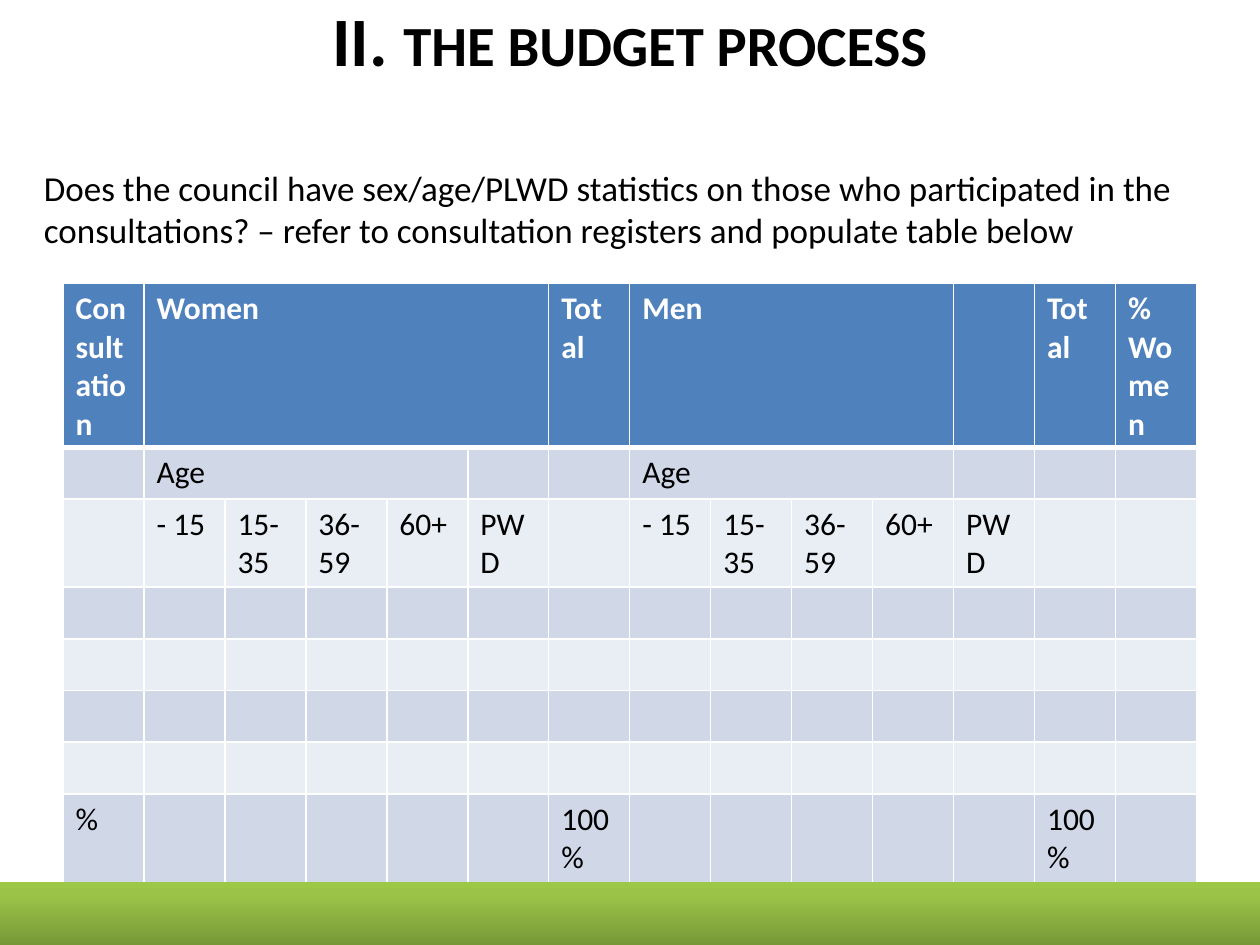
from copy import deepcopy
from dataclasses import dataclass

from lxml.etree import SubElement
from pptx import Presentation
from pptx.dml.color import RGBColor as Color
from pptx.enum.shapes import MSO_SHAPE as Shape
from pptx.enum.text import MSO_ANCHOR as Anchor, PP_ALIGN as Align
from pptx.oxml.ns import qn
from pptx.util import Inches, Pt


@dataclass(frozen=True)
class Theme:
    font: str = "Calibri"
    ink: str = "000000"
    white: str = "FFFFFF"
    head: str = "4F81BD"
    bands: tuple = ("D0D8E8", "E9EDF4")
    bar: tuple = ((0, "779737"), (0.8, "9BC348"), (1, "9DC746"))
    big: float = 39.6
    title: float = 32.4
    body: float = 20
    cell: float = 18
    thin: float = 1
    thick: float = 3


THEME = Theme()
COLS = 14
ROWS = [0.41] * 7 + [1.01]
AGES = ["- 15", "15-35", "36-59", "60+", "PWD"]
TEXTS = {
    0: {0: "Consultation", 1: "Women", 6: "Total", 7: "Men", 12: "Total", 13: "% Women"},
    1: {1: "Age", 7: "Age"},
    2: {start + i: age for start in (1, 7) for i, age in enumerate(AGES)},
    7: {0: "%", 6: "100%", 12: "100%"},
}
SPANS = [(0, 1, 5), (0, 7, 10), (1, 1, 4), (1, 7, 10)]


def style(run, size, color=THEME.ink, bold=False):
    font = run.font
    font.name = THEME.font
    font.size = Pt(size)
    font.bold = bold
    font.color.rgb = Color.from_string(color)


def add_text(slide, box, parts, bold=False):
    frame = slide.shapes.add_textbox(*map(Inches, box)).text_frame
    frame.word_wrap = True
    para = frame.paragraphs[0]
    for text, size in parts:
        run = para.add_run()
        run.text = text
        style(run, size, bold=bold)
    return frame


def add_title(slide):
    parts = [("II. ", THEME.big), ("THE BUDGET PROCESS", THEME.title)]
    frame = add_text(slide, (0.5, 0, 9, 0.62), parts, bold=True)
    frame.margin_top = frame.margin_bottom = 0
    frame.vertical_anchor = Anchor.MIDDLE
    frame.paragraphs[0].alignment = Align.CENTER


def set_edges(cell, base):
    props = cell._tc.get_or_add_tcPr()
    widths = {"lnL": THEME.thin, "lnR": THEME.thin, "lnT": THEME.thin, "lnB": base}
    for i, (tag, width) in enumerate(widths.items()):
        line = SubElement(props, qn(f"a:{tag}"), w=str(Pt(width)))
        fill = SubElement(line, qn("a:solidFill"))
        SubElement(fill, qn("a:srgbClr"), val=THEME.white)
        props.insert(i, line)


def fill_cell(cell, row, text):
    top = row == 0
    cell.fill.solid()
    shade = THEME.head if top else THEME.bands[(row - 1) % 2]
    cell.fill.fore_color.rgb = Color.from_string(shade)
    set_edges(cell, THEME.thick if top else THEME.thin)
    if text:
        para = cell.text_frame.paragraphs[0]
        para.text = text
        style(para.runs[0], THEME.cell, THEME.white if top else THEME.ink, top)


def add_grid(slide):
    box = map(Inches, (0.5, 2.25, 9, sum(ROWS)))
    table = slide.shapes.add_table(len(ROWS), COLS, *box).table
    for col in table.columns:
        col.width = Inches(9 / COLS)
    for r, height in enumerate(ROWS):
        table.rows[r].height = Inches(height)
        for c in range(COLS):
            fill_cell(table.cell(r, c), r, TEXTS.get(r, {}).get(c))
    for row, first, last in SPANS:
        table.cell(row, first).merge(table.cell(row, last))


def add_bar(slide):
    bar = slide.shapes.add_shape(Shape.RECTANGLE, *map(Inches, (0, 7, 10.21, 0.51)))
    bar.shadow.inherit = False
    bar.line.fill.background()
    bar.fill.gradient()
    bar.fill.gradient_angle = 90
    stops = bar._element.spPr.find(f".//{qn('a:gsLst')}")
    stops.append(deepcopy(stops[-1]))
    for stop, (place, color) in zip(bar.fill.gradient_stops, THEME.bar):
        stop.position = place
        stop.color.rgb = Color.from_string(color)


def main():
    deck = Presentation()
    deck.slide_width, deck.slide_height = Inches(10), Inches(7.5)
    slide = deck.slides.add_slide(deck.slide_layouts[6])
    add_title(slide)
    add_grid(slide)
    ask = (
        "Does the council have sex/age/PLWD statistics on those who participated in the "
        "consultations? – refer to consultation registers and populate table below"
    )
    add_text(slide, (0.25, 1.27, 9.5, 0.7), [(ask, THEME.body)])
    add_bar(slide)
    deck.save("out.pptx")


if __name__ == "__main__":
    main()
